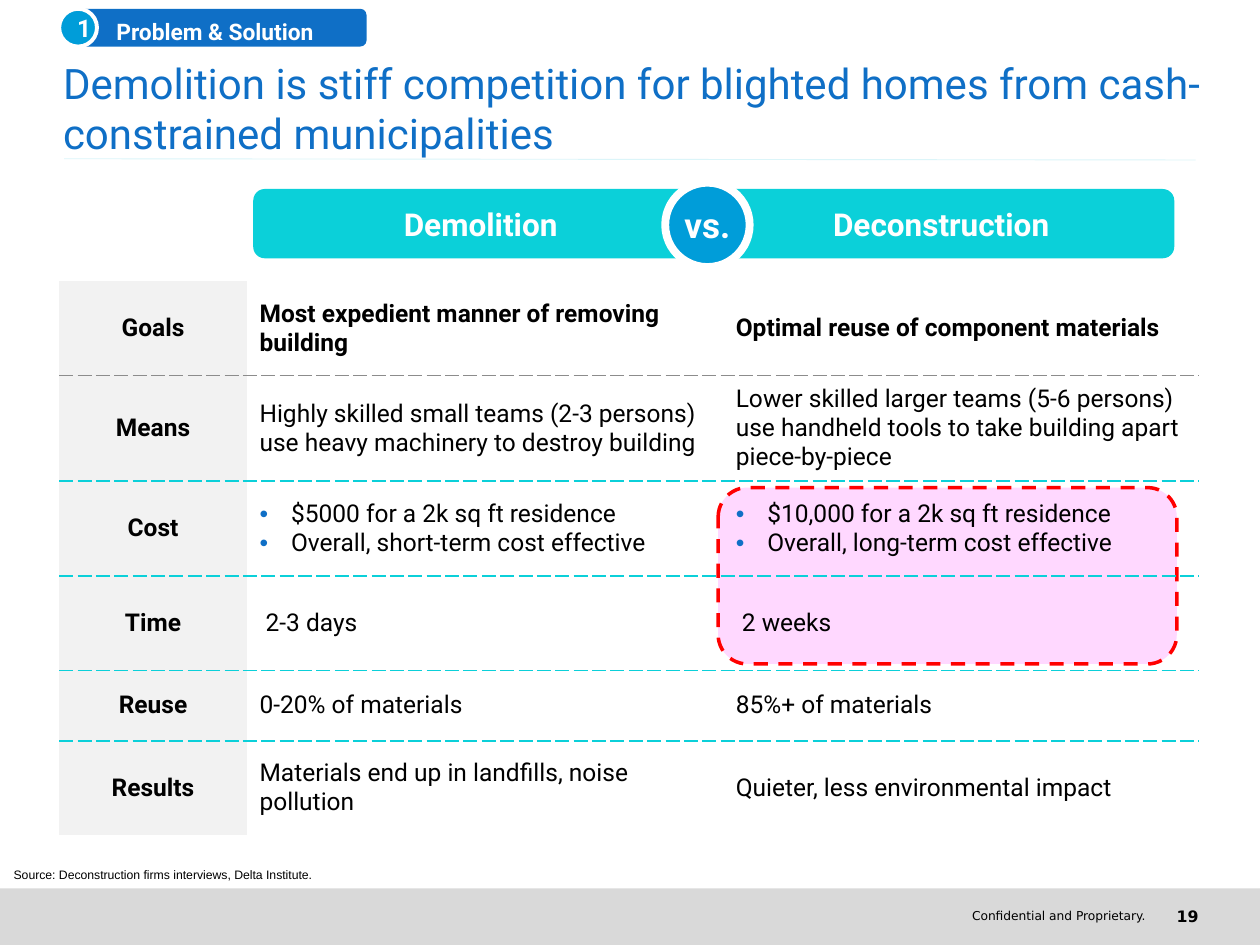
from lxml import etree
from pptx import Presentation, util as u
from pptx.dml import color as dc
from pptx.enum import dml, shapes, text
from pptx.oxml import ns

BLUE, SKY, TEAL, GRAY = "0F6FC6", "009DD9", "0BD0D9", "8C8C8C"
LEFT, MID, RIGHT = text.PP_ALIGN.LEFT, text.PP_ALIGN.CENTER, text.PP_ALIGN.RIGHT
ROUND = shapes.MSO_SHAPE.ROUNDED_RECTANGLE
OVAL = shapes.MSO_SHAPE.OVAL
SIDES = ("margin_left", "margin_top", "margin_right", "margin_bottom")
PAD = (0.1, 0.05, 0.1, 0.05)


def rgb(code):
    return dc.RGBColor.from_string(code)


def inches(*vals):
    return [u.Inches(v) for v in vals]


def add(parent, tag, **attrs):
    node = etree.SubElement(parent, ns.qn(tag))
    for key, val in attrs.items():
        node.set(key, str(val))
    return node


class Page:
    """Holds the text style and the current slide."""
    base = {"name": "Roboto", "size": 14, "bold": False, "color": "000000"}

    def __init__(self, slide):
        self.slide = slide

    def font(self, font, **style):
        for key, val in {**self.base, **style}.items():
            if key == "color":
                font.color.rgb = rgb(val)
            else:
                setattr(font, key, u.Pt(val) if key == "size" else val)

    def fill_text(self, frame, lines, align=LEFT, bullet=False, **style):
        for num, line in enumerate(lines):
            para = frame.paragraphs[0] if num == 0 else frame.add_paragraph()
            para.alignment = align
            if bullet:
                props = para._p.get_or_add_pPr()
                props.set("marL", str(u.Inches(0.25)))
                props.set("indent", str(-u.Inches(0.25)))
                add(add(props, "a:buClr"), "a:srgbClr", val=BLUE)
                add(props, "a:buFont", typeface="Arial")
                add(props, "a:buChar", char="•")
            run = para.add_run()
            run.text = line
            self.font(run.font, **style)

    def frame(self, frame, pad=PAD, anchor=text.MSO_ANCHOR.MIDDLE, wrap=True):
        for side, val in zip(SIDES, pad):
            setattr(frame, side, u.Inches(val))
        frame.vertical_anchor = anchor
        frame.word_wrap = wrap
        return frame

    def title(self, words, box, **style):
        title = self.slide.shapes.title
        for key, val in zip(("left", "top", "width", "height"), inches(*box)):
            setattr(title, key, val)
        frame = self.frame(title.text_frame, (0, 0, 0, 0))
        frame.auto_size = text.MSO_AUTO_SIZE.NONE
        self.fill_text(frame, [words], **style)

    def shape(self, kind, box, fill, line=None, width=1, words=None,
              pad=PAD, anchor=text.MSO_ANCHOR.MIDDLE, align=MID, **style):
        item = self.slide.shapes.add_shape(kind, *inches(*box))
        item.shadow.inherit = False
        item.fill.solid()
        item.fill.fore_color.rgb = rgb(fill)
        if line:
            item.line.color.rgb = rgb(line)
            item.line.width = u.Pt(width)
        else:
            item.line.fill.background()
        if words:
            frame = self.frame(item.text_frame, pad, anchor)
            self.fill_text(frame, [words], align, color="FFFFFF", bold=True, **style)
        return item

    def label(self, words, box, align=LEFT, wrap=True, **style):
        item = self.slide.shapes.add_textbox(*inches(*box))
        frame = self.frame(item.text_frame, PAD, text.MSO_ANCHOR.TOP, wrap)
        self.fill_text(frame, [words], align, **style)

    def rule(self, start, end, color, width):
        line = self.slide.shapes.add_connector(
            shapes.MSO_CONNECTOR.STRAIGHT, *inches(*start, *end))
        line.line.color.rgb = rgb(color)
        line.line.width = u.Pt(width)
        add(line._element.spPr, "a:effectLst")

    def edges(self, cell, top, bottom):
        """Draw dashed (color, points) edges above and below; clear the rest."""
        props = cell._tc.get_or_add_tcPr()
        for tag, edge in zip(("a:lnL", "a:lnR", "a:lnT", "a:lnB"),
                             (None, None, top, bottom)):
            if edge:
                line = add(props, tag, w=u.Pt(edge[1]))
                add(add(line, "a:solidFill"), "a:srgbClr", val=edge[0])
                add(line, "a:prstDash", val="dash")
            else:
                add(add(props, tag, w=0), "a:noFill")

    def table(self, rows, box, cols, heights, lines):
        grid = self.slide.shapes.add_table(len(rows), len(cols), *inches(*box)).table
        grid.first_row = grid.horz_banding = False
        for col, width in zip(grid.columns, cols):
            col.width = u.Inches(width)
        edges = [None, *lines, None]
        for r, (row, high) in enumerate(zip(rows, heights)):
            grid.rows[r].height = u.Inches(high)
            for c, words in enumerate(row):
                cell = grid.cell(r, c)
                cell.vertical_anchor = text.MSO_ANCHOR.MIDDLE
                self.edges(cell, edges[r], edges[r + 1])
                if c == 0:
                    cell.fill.solid()
                    cell.fill.fore_color.rgb = rgb("F2F2F2")
                else:
                    cell.fill.background()
                listed = isinstance(words, list)
                self.fill_text(cell.text_frame, words if listed else [words],
                               LEFT if c else MID, listed, bold=r == 0 or c == 0)


ROWS = [
    ("Goals", "Most expedient manner of removing building",
     "Optimal reuse of component materials"),
    ("Means", "Highly skilled small teams (2-3 persons) use heavy machinery to destroy building",
     "Lower skilled larger teams (5-6 persons) use handheld tools to take building apart "
     "piece-by-piece"),
    ("Cost", ["$5000 for a 2k sq ft residence", "Overall, short-term cost effective"],
     ["$10,000 for a 2k sq ft residence", "Overall, long-term cost effective"]),
    ("Time", " 2-3 days", " 2 weeks"),
    ("Reuse", "0-20% of materials", "85%+ of materials"),
    ("Results", "Materials end up in landfills, noise pollution",
     "Quieter, less environmental impact"),
]


def main():
    deck = Presentation()
    deck.slide_width, deck.slide_height = inches(10, 7.5)
    page = Page(deck.slides.add_slide(deck.slide_layouts[5]))

    page.shape(shapes.MSO_SHAPE.RECTANGLE, (0, 7.05, 10, 0.45), "D9D9D9")
    page.label("Confidential and Proprietary.", (4.05, 7.16, 5.14, 0.22), RIGHT,
               size=7, name="DejaVu Sans")
    page.label("19", (8.99, 7.15, 0.62, 0.4), RIGHT,
               size=9, name="DejaVu Sans", bold=True)
    page.rule((0.51, 1.26), (9.49, 1.27), "DBF5F9", 0.5)

    focus = page.shape(ROUND, (5.7, 3.87, 3.64, 1.4), "FFCCFF", "FF0000", 2)
    focus.line.dash_style = dml.MSO_LINE.DASH
    tint = focus._element.spPr.find(ns.qn("a:solidFill"))[0]
    add(tint, "a:alpha", val=76000)

    page.shape(ROUND, (0.61, 0.07, 2.3, 0.3), BLUE, words="Problem & Solution",
               pad=(0.3, 0, 0.1, 0), anchor=text.MSO_ANCHOR.BOTTOM, align=LEFT, size=13)
    page.shape(OVAL, (0.47, 0.07, 0.3, 0.3), SKY, "FFFFFF", 2.25, "1")
    page.title("Demolition is stiff competition for blighted homes from "
               "cash-constrained municipalities", (0.5, 0.51, 9.18, 0.69),
               size=24, color=BLUE)

    thin = (TEAL, 1)
    page.table(ROWS, (0.47, 2.23, 9.05, 4.4), (1.49, 3.78, 3.78),
               (0.75, 0.84, 0.75, 0.75, 0.56, 0.75),
               [(GRAY, 1), (TEAL, 1.5), thin, thin, thin])
    for words, left, width in (("Demolition", 2.01, 3.61), ("Deconstruction", 5.62, 3.7)):
        page.shape(ROUND, (left, 1.5, width, 0.55), TEAL, words=words, size=18)
    page.shape(OVAL, (5.28, 1.45, 0.67, 0.67), SKY, "FFFFFF", 4.5, "vs.",
               pad=(0, 0, 0, 0), size=20)
    page.label("Source: Deconstruction firms interviews, Delta Institute.",
               (0.01, 6.83, 2.61, 0.22), wrap=False, size=7, name="Arial")
    deck.save("out.pptx")


if __name__ == "__main__":
    main()
